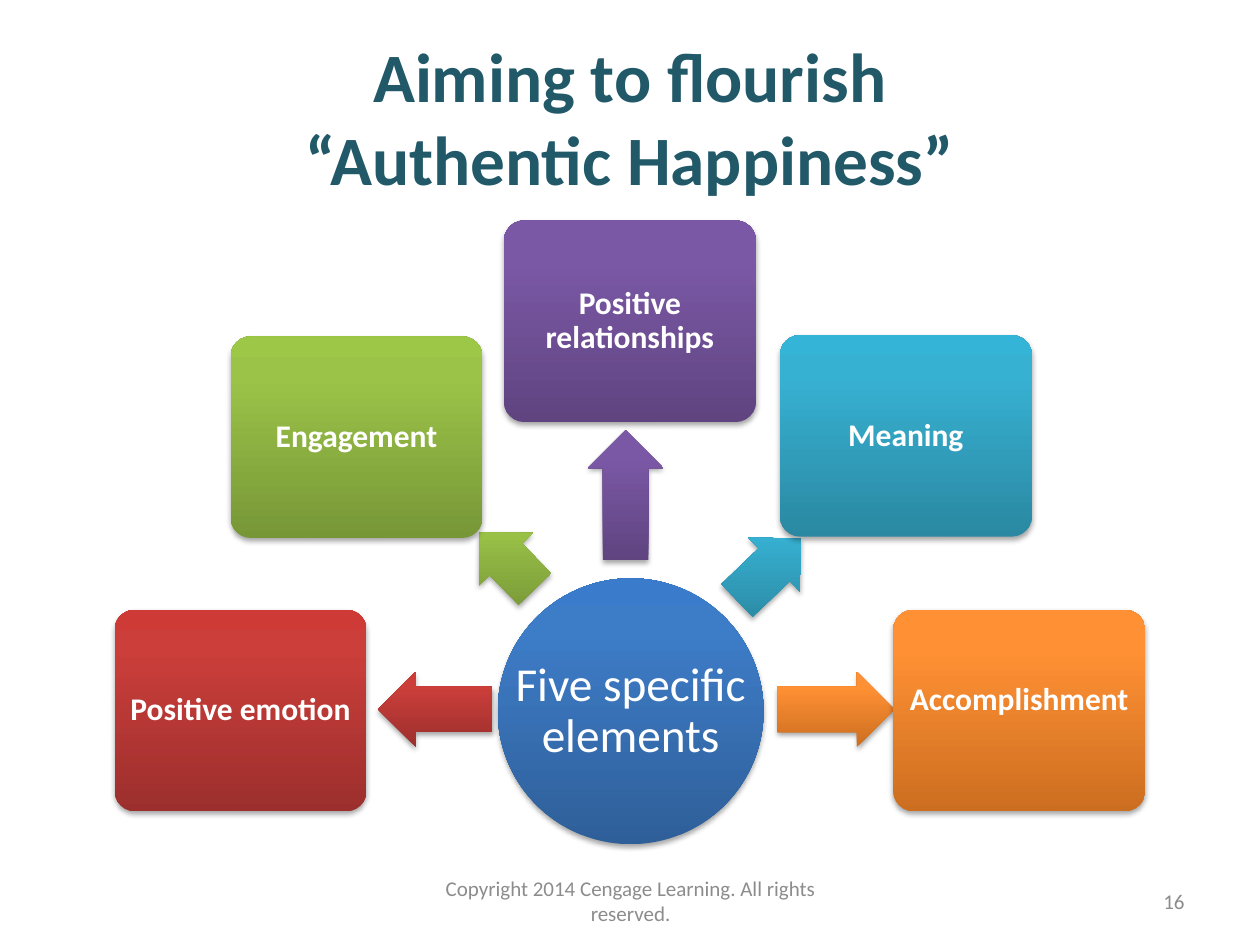
from lxml import etree
from pptx import Presentation
from pptx.dml.color import RGBColor
from pptx.enum.shapes import MSO_SHAPE
from pptx.enum.text import MSO_ANCHOR, PP_ALIGN
from pptx.oxml import parse_xml
from pptx.oxml.ns import nsdecls, qn
from pptx.util import Inches, Pt

OVAL, ARROW, CARD = MSO_SHAPE.OVAL, MSO_SHAPE.LEFT_ARROW, MSO_SHAPE.ROUNDED_RECTANGLE
MIDDLE = MSO_ANCHOR.MIDDLE
CENTER, RIGHT = PP_ALIGN.CENTER, PP_ALIGN.RIGHT

WHITE = RGBColor(0xFF, 0xFF, 0xFF)
TEAL = RGBColor(0x21, 0x59, 0x68)
GRAY = RGBColor(0x8C, 0x8C, 0x8C)
BLUE = [RGBColor(0x2F, 0x5F, 0x99), RGBColor(0x3D, 0x7C, 0xC7), RGBColor(0x3A, 0x7C, 0xCB)]
RED = [RGBColor(0x9C, 0x2F, 0x2D), RGBColor(0xCB, 0x3E, 0x3A), RGBColor(0xCE, 0x3B, 0x37)]
GREEN = [RGBColor(0x77, 0x97, 0x37), RGBColor(0x9B, 0xC3, 0x48), RGBColor(0x9D, 0xC7, 0x46)]
PURPLE = [RGBColor(0x5F, 0x44, 0x80), RGBColor(0x7B, 0x58, 0xA6), RGBColor(0x7C, 0x57, 0xA8)]
CYAN = [RGBColor(0x2A, 0x88, 0xA2), RGBColor(0x37, 0xB1, 0xD2), RGBColor(0x34, 0xB4, 0xD6)]
ORANGE = [RGBColor(0xCC, 0x6E, 0x20), RGBColor(0xFF, 0x90, 0x34), RGBColor(0xFF, 0x91, 0x36)]

COLS, ROWS = 100, 75
UNIT = Inches(10) // COLS
CARD_W, CARD_H, ARROW_H, HUB = 20, 16, 6, 21.1

ITEMS = [
    ("Positive emotion", RED, (0, 30.9), (20.9, 35.8, 9.1), 0),
    ("Engagement", GREEN, (9.2, 9.2), (28, 24, 6.3), 45.8),
    ("Positive relationships", PURPLE, (30.9, 0), (35.4, 18.8, 10.3), 90),
    ("Meaning", CYAN, (52.8, 9.1), (48.4, 24.7, 7.1), 136.2),
    ("Accomplishment", ORANGE, (61.8, 30.9), (52.6, 35.8, 9.3), 180),
]


def grid(*cells):
    return [round(cell * UNIT) for cell in cells]


def write(shape, text, size, color, bold=False, align=CENTER, inset=None, gap=None):
    frame = shape.text_frame
    frame.text = text
    frame.word_wrap = True
    frame.vertical_anchor = MIDDLE
    if inset is not None:
        frame.margin_left = frame.margin_right = Inches(inset)
        frame.margin_top = frame.margin_bottom = Inches(inset)
    for para in frame.paragraphs:
        para.alignment = align
        if gap:
            para.line_spacing = gap
        for run in para.runs:
            font = run.font
            font.name, font.size, font.bold = "Calibri", Pt(size), bold
            font.color.rgb = color


def label(slide, box, text, size, color, **style):
    write(slide.shapes.add_textbox(*grid(*box)), text, size, color, **style)


def solid(slide, kind, box, tones):
    shape = slide.shapes.add_shape(kind, *grid(*box))
    shape.line.fill.background()
    shape.shadow.inherit = False
    stops = "".join(
        f'<a:gs pos="{pos}"><a:srgbClr val="{tone}"/></a:gs>'
        for pos, tone in zip((0, 80000, 100000), tones)
    )
    fill = parse_xml(
        f'<a:gradFill {nsdecls("a")} rotWithShape="0"><a:gsLst>{stops}</a:gsLst>'
        '<a:lin ang="16200000" scaled="0"/></a:gradFill>'
    )
    props = shape.fill._xPr
    props.find(qn("a:prstGeom")).addnext(fill)
    shade = etree.SubElement(
        props.find(qn("a:effectLst")), qn("a:outerShdw"),
        blurRad=str(Pt(3.1)), dist=str(Pt(1.8)), dir="5400000", rotWithShape="0",
    )
    black = etree.SubElement(shade, qn("a:srgbClr"), val="000000")
    etree.SubElement(black, qn("a:alpha"), val="35000")
    return shape


def title(slide, box):
    label(slide, box, "Aiming to flourish\v“Authentic Happiness”", 39.6, TEAL, bold=True)


def hub(slide, box):
    solid(slide, OVAL, box, BLUE)
    label(slide, box, "Five specific elements", 27, WHITE, inset=0.02, gap=0.9)


def spoke(slide, left, top, item):
    text, tones, (col, row), (x, y, width), turn = item
    arrow = solid(slide, ARROW, (left + x, top + y, width, ARROW_H), tones)
    arrow.adjustments[0], arrow.adjustments[1] = 0.6, 0.5
    arrow.rotation = turn
    card = solid(slide, CARD, (left + col, top + row, CARD_W, CARD_H), tones)
    card.adjustments[0] = 0.1
    write(card, text, 18, WHITE, bold=True, inset=0.04, gap=0.9)
    return card


def wheel(slide, left, top):
    hub(slide, (left + 30.4, top + 28.4, HUB, HUB))
    cards = [spoke(slide, left, top, item) for item in ITEMS]
    cards[-1].text_frame.margin_bottom = Inches(0.21)


def footer(slide, top, height):
    label(slide, (71.7, top, 23.3, height), "16", 12, GRAY, align=RIGHT)
    label(slide, (34.2, top, 31.7, height),
          "Copyright 2014 Cengage Learning. All rights reserved.", 12, GRAY)


def main():
    deck = Presentation()
    deck.slide_width, deck.slide_height = grid(COLS, ROWS)
    slide = deck.slides.add_slide(deck.slide_layouts[6])
    title(slide, (5, 3, 90, 12.5))
    wheel(slide, 9.1, 17.5)
    footer(slide, 69.5, 4)
    deck.save("out.pptx")


if __name__ == "__main__":
    main()
